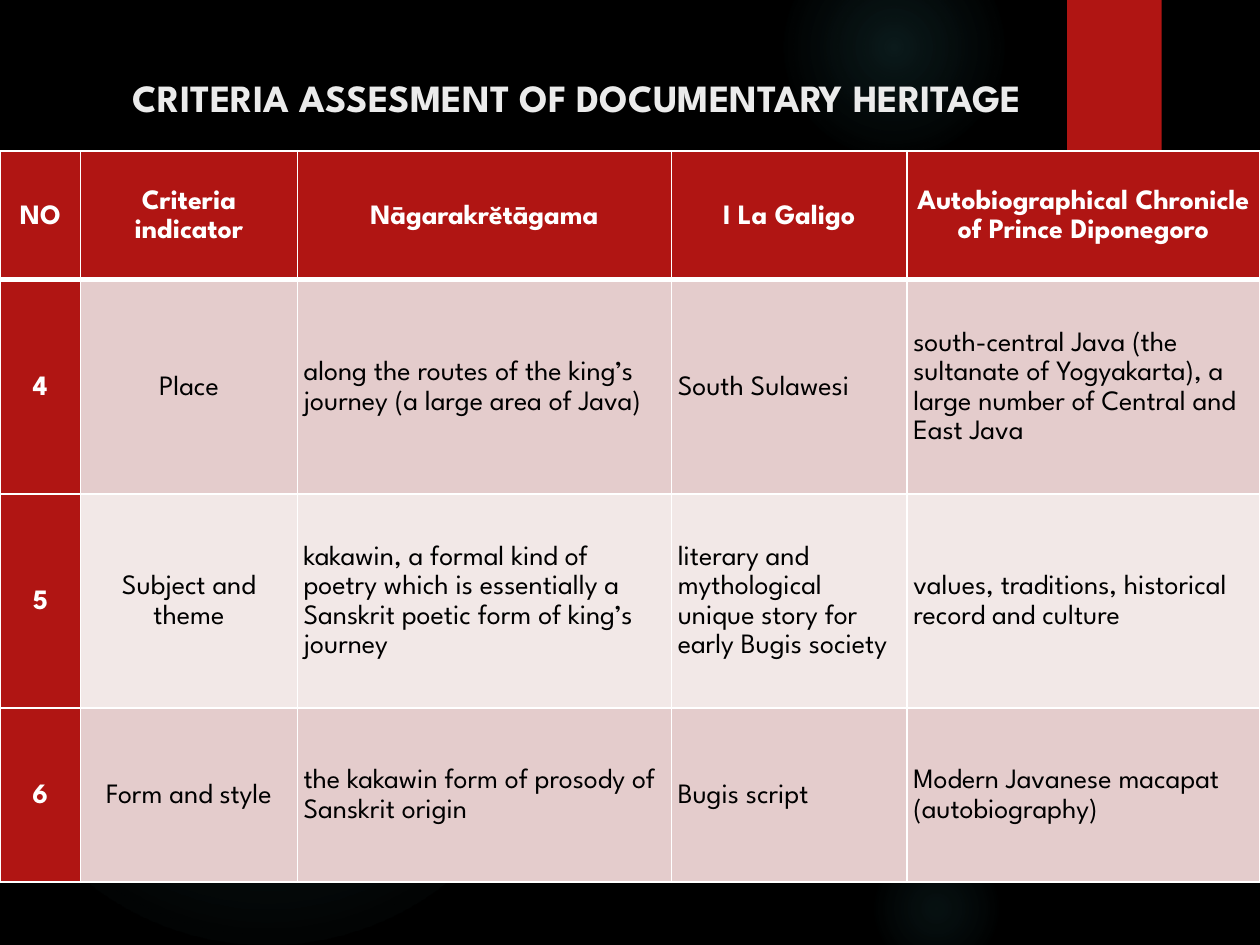
from lxml import etree
from pptx import Presentation
from pptx import util as u
from pptx.dml import color
from pptx.enum import shapes, text
from pptx.oxml import parse_xml
from pptx.oxml.ns import nsdecls, qn

FONT = "League Spartan"
RED, WHITE, BLACK, GLOW = "B01513", "FFFFFF", "000000", "50B9C1"
BANDS = ("E4CCCC", "F2E8E7")

# left, top, diameter, (position %, opacity %) stops
GLOWS = [
    (6.89, 1.83, 3.08, [(0, 7), (36, 6), (69, 0)]),
    (6.22, -0.5, 1.75, [(0, 14), (36, 7), (73, 0)]),
    (6.89, 6.67, 1.08, [(0, 9), (36, 5), (66, 0)]),
    (-0.17, 2.92, 4.58, [(0, 11), (36, 10), (75, 0)]),
    (-0.92, 3.17, 2.58, [(0, 8), (36, 8), (72, 0)]),
]
COLUMNS = [0.64, 1.72, 2.97, 1.87, 2.8]
ROWS = [1.02, 1.7, 1.7, 1.38]
CRITERIA = [
    ["NO", "Criteria\nindicator", "Nāgarakrĕtāgama", "I La Galigo",
     "Autobiographical Chronicle of Prince Diponegoro"],
    ["4", "Place",
     "along the routes of the king’s journey (a large area of Java)",
     "South Sulawesi",
     "south-central Java (the sultanate of Yogyakarta), a large number of "
     "Central and East Java"],
    ["5", "Subject and theme",
     "kakawin, a formal kind of poetry which is essentially a Sanskrit "
     "poetic form of king’s journey",
     "literary and mythological unique story for early Bugis society",
     "values, traditions, historical record and culture"],
    ["6", "Form and style",
     "the kakawin form of prosody of Sanskrit origin",
     "Bugis script",
     "Modern Javanese macapat (autobiography)"],
]


def rgb(value):
    return color.RGBColor.from_string(value)


def apply(target, **values):
    for name, value in values.items():
        setattr(target, name, value)


def write(para, words, size, fill, bold):
    span = para.add_run()
    span.text = words
    apply(span.font, name=FONT, size=u.Pt(size), bold=bold)
    span.font.color.rgb = rgb(fill)


def add_plain_shape(page, kind, box):
    shape = page.shapes.add_shape(kind, *map(u.Inches, box))
    shape.shadow.inherit = False
    shape.line.fill.background()
    return shape


def add_glow(page, box, stops):
    shape = add_plain_shape(page, shapes.MSO_SHAPE.OVAL, box)
    shape.fill.background()
    marks = "".join(
        f'<a:gs pos="{place * 1000}"><a:srgbClr val="{GLOW}">'
        f'<a:alpha val="{opacity * 1000}"/></a:srgbClr></a:gs>'
        for place, opacity in stops)
    gradient = parse_xml(
        f'<a:gradFill {nsdecls("a")} rotWithShape="1"><a:gsLst>{marks}</a:gsLst>'
        '<a:path path="circle"><a:fillToRect l="50000" t="50000" r="50000" '
        'b="50000"/></a:path></a:gradFill>')
    props = shape._element.spPr
    props.replace(props.find(qn("a:noFill")), gradient)


def add_ribbon(page, box):
    shape = add_plain_shape(page, shapes.MSO_SHAPE.RECTANGLE, box)
    shape.fill.solid()
    shape.fill.fore_color.rgb = rgb(RED)
    effects = shape._element.spPr.find(qn("a:effectLst"))
    effects.append(parse_xml(
        f'<a:outerShdw {nsdecls("a")} blurRad="{u.Pt(3)}" dist="{u.Pt(2)}" '
        f'dir="5400000" rotWithShape="0"><a:srgbClr val="{BLACK}">'
        '<a:alpha val="45000"/></a:srgbClr></a:outerShdw>'))


def add_title(page, box, words):
    frame = page.shapes.add_textbox(*map(u.Inches, box)).text_frame
    apply(frame, word_wrap=True, margin_top=u.Inches(0.15),
          vertical_anchor=text.MSO_ANCHOR.TOP)
    para = frame.paragraphs[0]
    para.alignment = text.PP_ALIGN.CENTER
    write(para, words, 22, "EBEBEB", True)


def set_borders(cell, bottom):
    props = cell._tc.get_or_add_tcPr()
    widths = {"lnL": 1, "lnR": 1, "lnT": 1, "lnB": bottom}
    for index, (side, width) in enumerate(widths.items()):
        line = etree.Element(qn(f"a:{side}"), w=str(u.Pt(width)))
        fill = etree.SubElement(line, qn("a:solidFill"))
        etree.SubElement(fill, qn("a:srgbClr"), val=WHITE)
        props.insert(index, line)


def fill_cell(cell, words, row, column):
    strong = row == 0 or column == 0
    centred = strong or column == 1
    cell.fill.solid()
    cell.fill.fore_color.rgb = rgb(RED if strong else BANDS[(row - 1) % 2])
    side = u.Inches(0.05)
    apply(cell, margin_left=side, margin_right=side, margin_top=0,
          margin_bottom=0, vertical_anchor=text.MSO_ANCHOR.MIDDLE)
    frame = cell.text_frame
    for index, part in enumerate(words.split("\n")):
        para = frame.add_paragraph() if index else frame.paragraphs[0]
        align = text.PP_ALIGN.CENTER if centred else text.PP_ALIGN.LEFT
        apply(para, alignment=align, line_spacing=1.15)
        write(para, part, 16, WHITE if strong else BLACK, strong)
    set_borders(cell, bottom=3 if row == 0 else 1)


def add_criteria_table(page, left, top):
    box = (left, top, sum(COLUMNS), sum(ROWS))
    table = page.shapes.add_table(
        len(ROWS), len(COLUMNS), *map(u.Inches, box)).table
    for column, width in zip(table.columns, COLUMNS):
        column.width = u.Inches(width)
    for row, height in zip(table.rows, ROWS):
        row.height = u.Inches(height)
    for row, entries in enumerate(CRITERIA):
        for column, words in enumerate(entries):
            fill_cell(table.cell(row, column), words, row, column)


def main():
    deck = Presentation()
    apply(deck, slide_width=u.Inches(10), slide_height=u.Inches(7.5))
    page = deck.slides.add_slide(deck.slide_layouts[6])
    page.background.fill.solid()
    page.background.fill.fore_color.rgb = rgb(BLACK)

    # Backdrop
    for left, top, size, stops in GLOWS:
        add_glow(page, (left, top, size, size), stops)
    add_ribbon(page, (8.47, 0, 0.75, 1.2))

    # Content
    add_title(page, (0.72, 0.44, 7.72, 1.29),
              "CRITERIA ASSESMENT OF DOCUMENTARY HERITAGE")
    add_criteria_table(page, 0, 1.2)
    deck.save("out.pptx")


if __name__ == "__main__":
    main()
